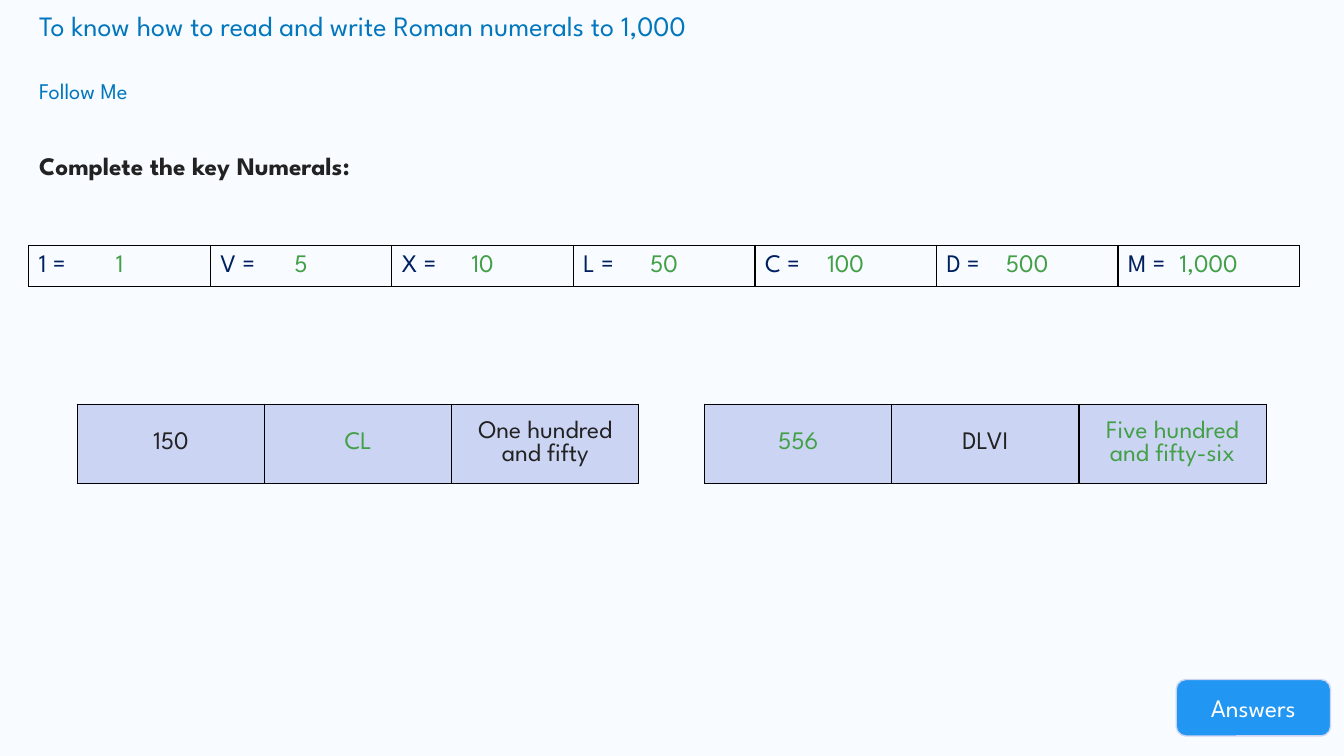
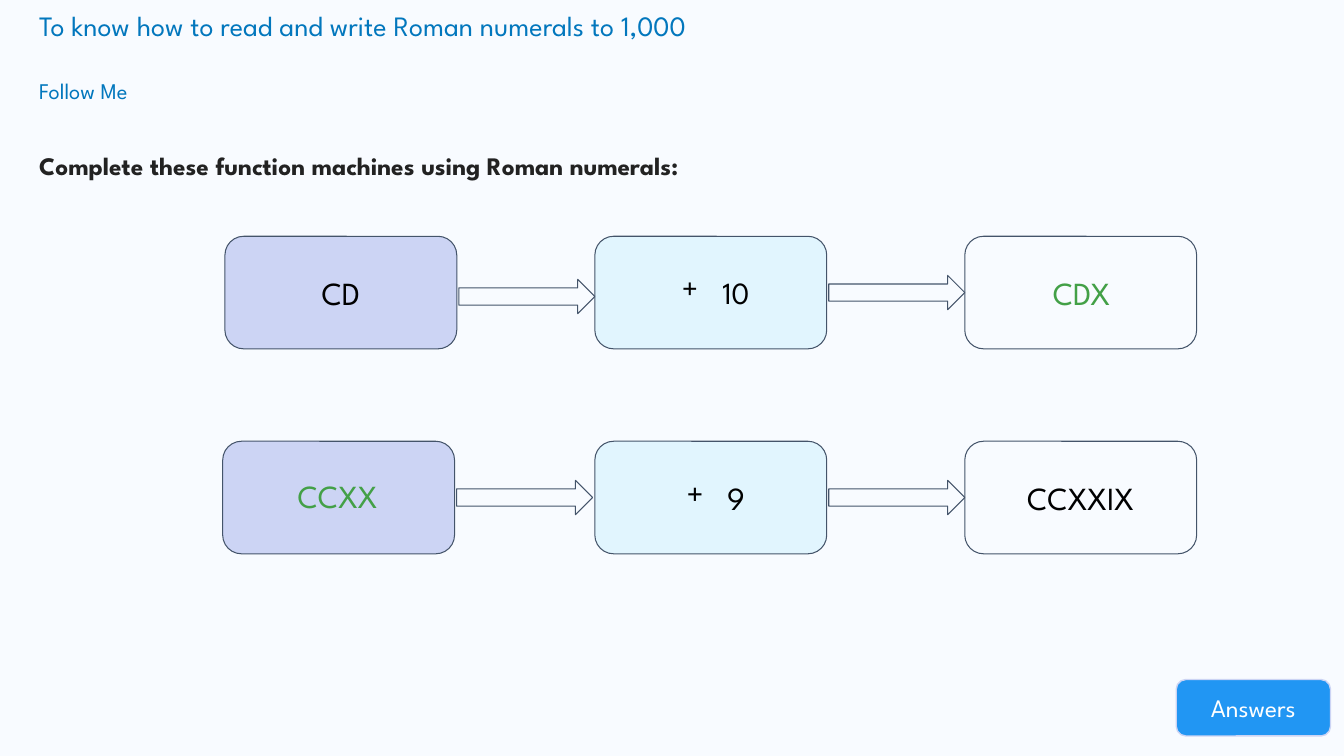
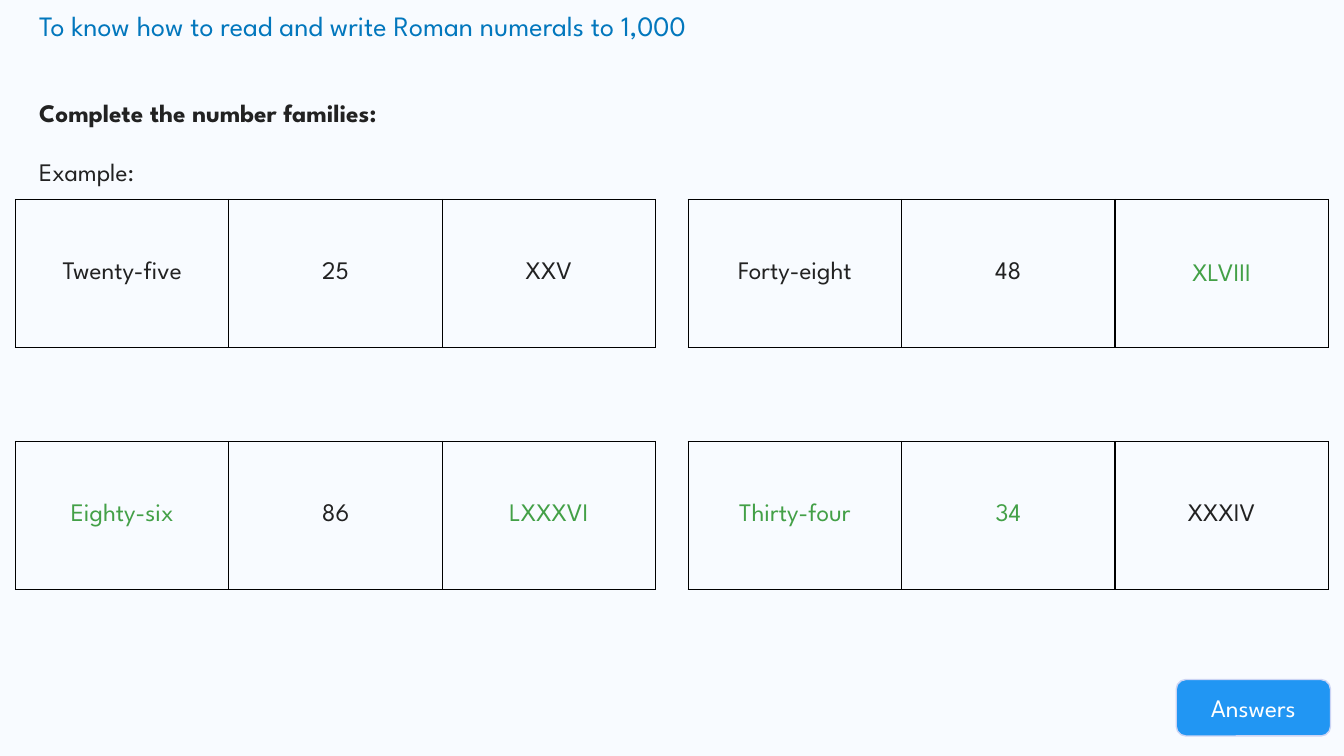
from lxml import etree
from pptx import Presentation
from pptx.dml.color import RGBColor
from pptx.enum.shapes import MSO_SHAPE
from pptx.enum.text import MSO_ANCHOR, PP_ALIGN
from pptx.oxml.ns import qn
from pptx.util import Pt

ROUND, ARROW = MSO_SHAPE.ROUNDED_RECTANGLE, MSO_SHAPE.RIGHT_ARROW
TOP, MIDDLE = MSO_ANCHOR.TOP, MSO_ANCHOR.MIDDLE
LEFT, CENTER = PP_ALIGN.LEFT, PP_ALIGN.CENTER

PAPER = RGBColor(0xF8, 0xFB, 0xFF)
TITLE = RGBColor(0x02, 0x77, 0xBD)
INK = RGBColor(0x22, 0x22, 0x22)
BLACK = RGBColor(0x00, 0x00, 0x00)
WHITE = RGBColor(0xFF, 0xFF, 0xFF)
NAVY = RGBColor(0x00, 0x20, 0x60)
GREEN = RGBColor(0x43, 0xA0, 0x47)
BLUE = RGBColor(0x21, 0x96, 0xF3)
LILAC = RGBColor(0xCC, 0xD4, 0xF4)
SKY = RGBColor(0xE1, 0xF5, 0xFE)
SLATE = RGBColor(0x44, 0x54, 0x6A)

SIDES = ("a:lnL", "a:lnR", "a:lnT", "a:lnB")


class Deck:
    face = "League Spartan"

    def __init__(self):
        self.file = Presentation()
        self.file.slide_width, self.file.slide_height = Pt(960), Pt(540)
        fill = self.file.slide_master.background.fill
        fill.solid()
        fill.fore_color.rgb = PAPER
        self.slide = None

    def start(self):
        self.slide = self.file.slides.add_slide(self.file.slide_layouts[6])
        self.text(20.9, 2.9, 888.5, 31.7,
                  [("To know how to read and write Roman numerals to 1,000", {})],
                  size=20, color=TITLE)
        self.box(840.25, 485.4, 110.15, 40.3, "Answers", fill=BLUE, line=LILAC,
                 width=1, size=18, color=WHITE, pad=3.6)

    def style(self, para, text, size=18, color=INK, bold=False):
        run = para.add_run()
        run.text = text
        form = {"name": self.face, "size": Pt(size), "bold": bold}
        for name, value in form.items():
            setattr(run.font, name, value)
        run.font.color.rgb = color

    def frame(self, frame, anchor, pad):
        form = {"word_wrap": True, "vertical_anchor": anchor,
                "margin_left": Pt(7.2), "margin_right": Pt(7.2),
                "margin_top": Pt(pad), "margin_bottom": Pt(pad)}
        for name, value in form.items():
            setattr(frame, name, value)

    def text(self, x, y, w, h, lines, space=None, anchor=TOP, align=LEFT,
             pad=3.6, **look):
        frame = self.slide.shapes.add_textbox(
            Pt(x), Pt(y), Pt(w), Pt(h)).text_frame
        self.frame(frame, anchor, pad)
        for i, (words, extra) in enumerate(lines):
            para = frame.add_paragraph() if i else frame.paragraphs[0]
            para.alignment = align
            if space:
                para.line_spacing = space
            if i:
                para.space_before = Pt(10)
            self.style(para, words, **{**look, **extra})

    def label(self):
        self.text(20.9, 51.5, 213.8, 33.1, [("Follow Me", {})],
                  size=16, color=TITLE)

    def task(self, y, h, words, *more):
        lines = [(words, {"bold": True})] + [(line, {}) for line in more]
        self.text(20.9, y, 924.5, h, lines, space=1.5)

    def answer(self, x, y, words):
        self.text(x, y, 164.2, 80.6, [(words, {})], anchor=MIDDLE,
                  align=CENTER, pad=7.2, size=23, color=GREEN)

    def box(self, x, y, w, h, words="", kind=ROUND, fill=None, line=SLATE,
            width=0.75, size=23, color=BLACK, pad=7.2, mark=None):
        shape = self.slide.shapes.add_shape(kind, Pt(x), Pt(y), Pt(w), Pt(h))
        shape.shadow.inherit = False
        if fill is None:
            shape.fill.background()
        else:
            shape.fill.solid()
            shape.fill.fore_color.rgb = fill
        shape.line.color.rgb = line
        shape.line.width = Pt(width)
        if words:
            self.frame(shape.text_frame, MIDDLE, pad)
            para = shape.text_frame.paragraphs[0]
            para.alignment = CENTER
            if mark:
                self.mark(para, mark, color)
            self.style(para, words, size, color)

    def mark(self, para, sign, color):
        prop = para._p.get_or_add_pPr()
        prop.set("marL", str(Pt(36)))
        prop.set("indent", str(Pt(-29)))
        tint = etree.SubElement(prop, qn("a:buClr"))
        etree.SubElement(tint, qn("a:srgbClr"), val=str(color))
        etree.SubElement(prop, qn("a:buFont"), typeface=self.face)
        etree.SubElement(prop, qn("a:buChar"), char=sign)

    def edge(self, cell, line):
        prop = cell._tc.get_or_add_tcPr()
        for side in SIDES:
            rule = etree.SubElement(prop, qn(side), w=str(Pt(1)))
            if line is None:
                etree.SubElement(rule, qn("a:noFill"))
            else:
                paint = etree.SubElement(rule, qn("a:solidFill"))
                etree.SubElement(paint, qn("a:srgbClr"), val=str(line))

    def table(self, x, y, w, h, cells, color=INK, fill=None, line=BLACK,
              align=CENTER):
        table = self.slide.shapes.add_table(
            1, len(cells), Pt(x), Pt(y), Pt(w), Pt(h)).table
        table.first_row = table.horz_banding = False
        for i, words in enumerate(cells):
            table.columns[i].width = Pt(w / len(cells))
            cell = table.cell(0, i)
            cell.vertical_anchor = MIDDLE
            self.edge(cell, line)
            if fill is None:
                cell.fill.background()
            else:
                cell.fill.solid()
                cell.fill.fore_color.rgb = fill
            if words:
                para = cell.text_frame.paragraphs[0]
                para.alignment = align
                self.style(para, words, color=color)

    def family(self, x, y, w, h, given, *covers, fill=None):
        self.table(x, y, w, h, given, fill=fill)
        step = w / len(given)
        for first, drop, found in covers:
            self.table(x + first * step, y + drop, step * len(found), h, found,
                       color=GREEN, line=None)


def key(deck):
    deck.start()
    deck.label()
    deck.task(92.9, 54.7, "Complete the key Numerals:")
    groups = [
        (("150", "", "One hundred and fifty"), (1, 0, ("CL",))),
        (("", "DLVI", ""), (0, 0, ("556", "", "Five hundred and fifty-six"))),
    ]
    for i, group in enumerate(groups):
        deck.family(55.4 + i * 448, 288.7, 401, 56.5, *group, fill=LILAC)
    pairs = [("1", "1"), ("V", "5"), ("X", "10"), ("L", "50"),
             ("C", "100"), ("D", "500"), ("M", "1,000")]
    area = (20.6, 175.4, 907.6, 29.2)
    deck.table(*area, [sign + " =" for sign, _ in pairs], color=NAVY,
               align=LEFT)
    deck.table(*area, [value for _, value in pairs], color=GREEN, line=None)


def machines(deck):
    deck.start()
    deck.label()
    deck.task(92.9, 40.3,
              "Complete these function machines using Roman numerals:")
    wide, high, step = 165.6, 80.4, 264.25
    rows = [
        (168.8, 0, 2.8, "CD", ("10", 22), ""),
        (315.2, -1.6, 0, "", ("9", 23), "CCXXIX"),
    ]
    for y, shift, drop, start, (add, size), end in rows:
        lefts = [160.7 + shift, 160.7 + step, 160.7 + 2 * step]
        deck.box(lefts[0], y, wide, high, start, fill=LILAC)
        deck.box(lefts[1], y, wide, high, add, fill=SKY, size=size, mark="+")
        deck.box(lefts[2], y, wide, high, end)
        for x, dy in zip(lefts, (drop, 0)):
            deck.box(x + wide + 1.4, y + (high - 24.5) / 2 + dy, 97.2, 24.5,
                     kind=ARROW)
    deck.answer(159.1, 313.9, "CCXX")
    deck.answer(690.5, 168.5, "CDX")


def families(deck):
    deck.start()
    deck.task(55.2, 90, "Complete the number families:", "Example:")
    groups = [
        (("Twenty-five", "25", "XXV"),),
        (("Forty-eight", "48", ""), (2, 1.4, ("XLVIII",))),
        (("", "86", ""), (2, 0, ("LXXXVI",)), (0, 0, ("Eighty-six",))),
        (("", "", "XXXIV"), (0, 0, ("Thirty-four", "34"))),
    ]
    for i, group in enumerate(groups):
        row, col = divmod(i, 2)
        deck.family(11.1 + col * 480.5, 142.5 + row * 172.9, 457.2, 105.8,
                    *group)


def main():
    deck = Deck()
    for build in (key, machines, families):
        build(deck)
    deck.file.save("out.pptx")


if __name__ == "__main__":
    main()
